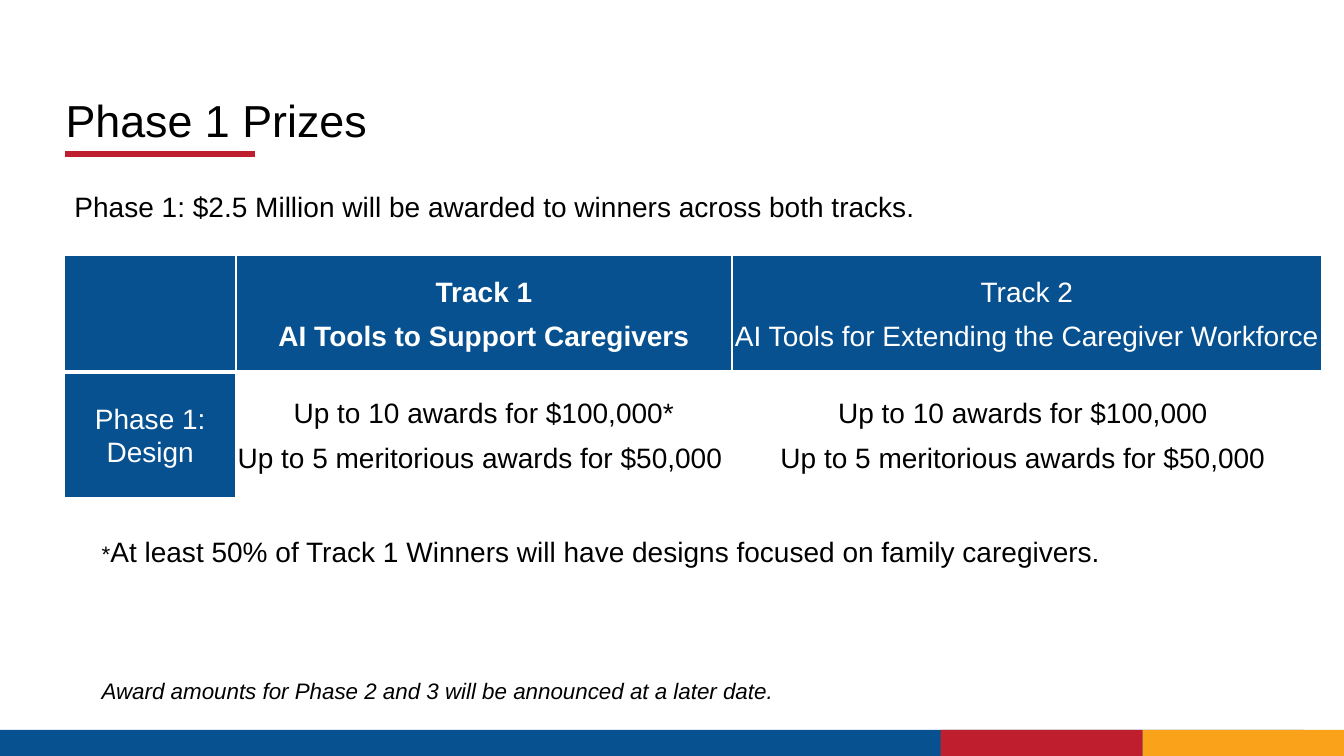
from lxml import etree
from pptx import Presentation
from pptx import util as u
from pptx.dml.color import RGBColor
from pptx.enum import shapes, text
from pptx.oxml.ns import qn

PX = 9144
FONT = "Arial"
BLUE, RED, ORANGE = "075190", "BE1E2D", "F9A21A"
WHITE, BLACK = "FFFFFF", "000000"
HEADERS = ["", "Track 1\nAI Tools to Support Caregivers",
           "Track 2\nAI Tools for Extending the Caregiver Workforce"]
AWARDS = ["Phase 1: Design",
          "Up to 10 awards for $100,000*\nUp to 5 meritorious awards for $50,000 ",
          "Up to 10 awards for $100,000 \nUp to 5 meritorious awards for $50,000 "]


def px(*lengths):
    """Turn px lengths into EMU."""
    return [u.Emu(length * PX) for length in lengths]


def color(value):
    """Turn a hex string into a colour."""
    return RGBColor.from_string(value)


def style(run, size, fill=BLACK, bold=False, italic=False):
    """Format one run."""
    run.font.name, run.font.size = FONT, u.Pt(size)
    run.font.bold, run.font.italic = bold, italic
    run.font.color.rgb = color(fill)


def add_text_box(slide, box):
    """Add a wrapping, vertically centred text box and return its frame."""
    frame = slide.shapes.add_textbox(*px(*box)).text_frame
    frame.word_wrap = True
    frame.vertical_anchor = text.MSO_ANCHOR.MIDDLE
    return frame


def add_footer(slide, box):
    """Draw the coloured bands along the bottom of the box."""
    left, top, width, height = box
    band = 200
    bands = [(left, width - 40, BLUE),
             (left + width - band, band, ORANGE),
             (left + width - 2 * band, band, RED)]
    for band_left, band_width, fill in bands:
        shape = slide.shapes.add_shape(shapes.MSO_SHAPE.RECTANGLE,
                                       *px(band_left, top, band_width, height))
        shape.shadow.inherit = False
        shape.fill.solid()
        shape.fill.fore_color.rgb = color(fill)
        shape.line.fill.background()


def add_title(slide, box):
    """Place the title and the red rule under its start."""
    left, top, width, height = box
    title = slide.shapes.title
    title.left, title.top, title.width, title.height = px(*box)
    frame = title.text_frame
    frame.text = "Phase 1 Prizes"
    frame.auto_size = text.MSO_AUTO_SIZE.NONE
    frame.vertical_anchor = text.MSO_ANCHOR.MIDDLE
    paragraph = frame.paragraphs[0]
    paragraph.alignment = text.PP_ALIGN.LEFT
    paragraph.line_spacing = 0.9
    style(paragraph.runs[0], 32)
    bottom = top + height
    rule = slide.shapes.add_connector(shapes.MSO_CONNECTOR.STRAIGHT,
                                      *px(left + 198, bottom, left + 9, bottom))
    rule.line.color.rgb = color(RED)
    rule.line.width = u.Pt(4.5)
    etree.SubElement(rule._element.spPr, qn("a:effectLst"))


def add_summary(slide, box):
    """Write the sentence above the table."""
    frame = add_text_box(slide, box)
    frame.text = "Phase 1: $2.5 Million will be awarded to winners across both tracks."
    style(frame.paragraphs[0].runs[0], 20)


def set_borders(cell, widths):
    """Give a cell white borders of the given widths in points, by side."""
    properties = cell._tc.get_or_add_tcPr()
    for index, (side, points) in enumerate(widths.items()):
        line = etree.Element(qn(f"a:ln{side}"), w=str(u.Pt(points)))
        fill = etree.SubElement(line, qn("a:solidFill"))
        etree.SubElement(fill, qn("a:srgbClr"), val=WHITE)
        properties.insert(index, line)


def fill_cell(cell, content, is_label, bold, widths):
    """Write and format one table cell."""
    cell.fill.solid()
    cell.fill.fore_color.rgb = color(BLUE if is_label else WHITE)
    cell.margin_left = cell.margin_right = cell.margin_top = cell.margin_bottom = 0
    cell.vertical_anchor = text.MSO_ANCHOR.MIDDLE
    cell.text_frame.text = content
    for paragraph in cell.text_frame.paragraphs:
        paragraph.alignment = text.PP_ALIGN.CENTER
        paragraph.line_spacing = 1.07
        paragraph.space_after = u.Pt(8)
        for run in paragraph.runs:
            style(run, 20, WHITE if is_label else BLACK, bold)
    set_borders(cell, widths)


def add_prize_table(slide, box):
    """Build the table of awards by track."""
    table = slide.shapes.add_table(2, 3, *px(*box)).table
    for column, width in zip(table.columns, px(170, 492, 585)):
        column.width = width
    for row, height in zip(table.rows, px(116, 125)):
        row.height = height
    for r, contents in enumerate([HEADERS, AWARDS]):
        widths = {"L": 1, "R": 1, "T": 3 if r else 1, "B": 1 if r else 3}
        for c, content in enumerate(contents):
            fill_cell(table.cell(r, c), content, r == 0 or c == 0,
                      (r, c) == (0, 1), widths)


def add_notes(slide, box):
    """Write the footnote and the remark on later phases."""
    frame = add_text_box(slide, box)
    footnote = frame.paragraphs[0]
    parts = [("*", 16), ("At least 50% of Track 1 Winners will have designs "
                         "focused on family caregivers.", 20)]
    for content, size in parts:
        run = footnote.add_run()
        run.text = content
        style(run, size)
    remark = frame.add_paragraph()
    remark.text = "Award amounts for Phase 2 and 3 will be announced at a later date."
    remark.space_before = u.Pt(78)
    style(remark.runs[0], 16, italic=True)


def main():
    """Build and save the slide."""
    presentation = Presentation()
    presentation.slide_width, presentation.slide_height = px(1333, 750)
    slide = presentation.slides.add_slide(presentation.slide_layouts[5])
    add_footer(slide, (0, 724, 1333, 26))
    add_title(slide, (55, 91, 1074, 62))
    add_summary(slide, (64, 183, 1065, 44))
    add_prize_table(slide, (64, 253, 1247, 241))
    add_notes(slide, (91, 522, 1071, 185))
    presentation.save("out.pptx")


if __name__ == "__main__":
    main()
